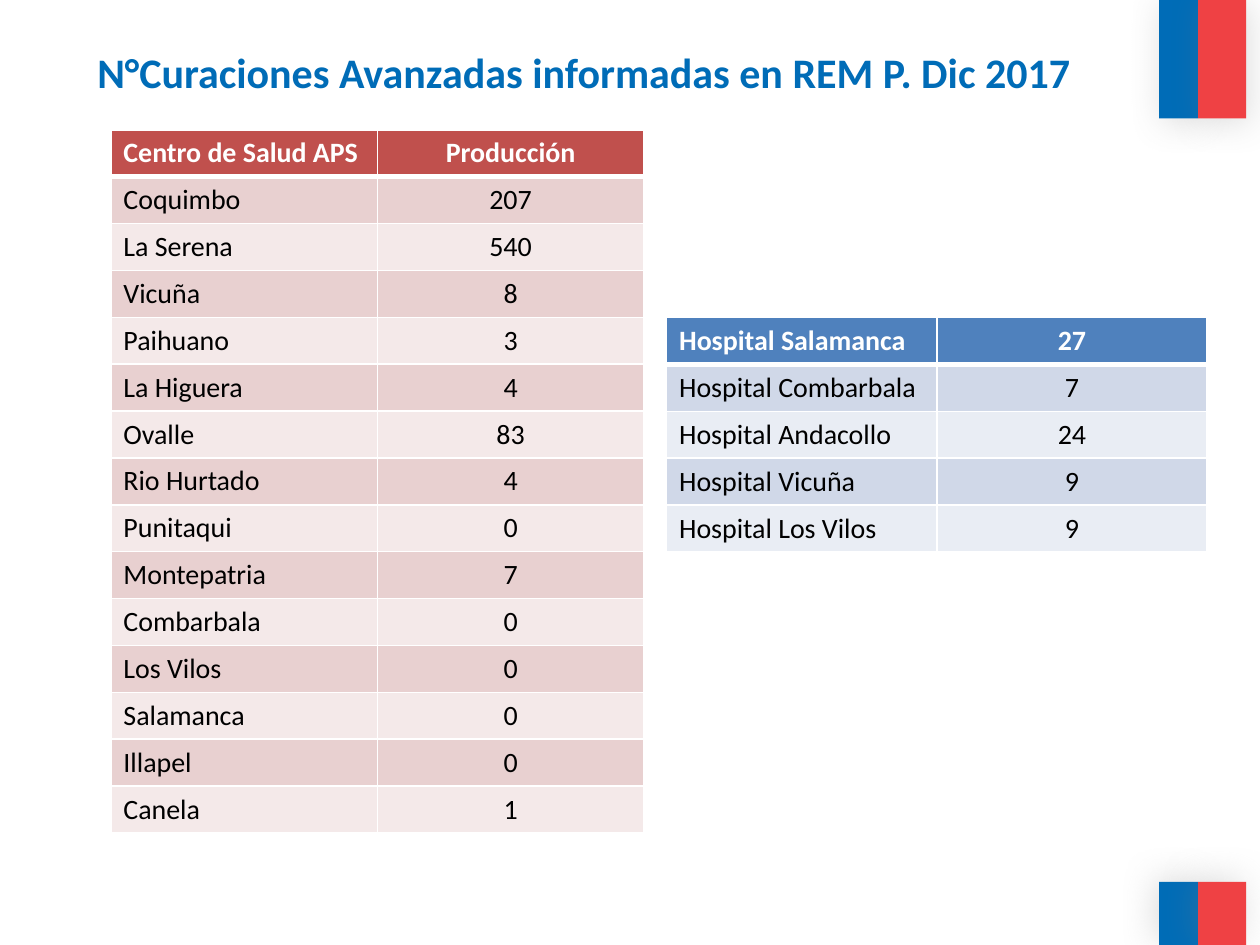
"""Build the slide on advanced wound care counts by health centre."""
from dataclasses import dataclass

from lxml import etree
from pptx import Presentation
from pptx import util as u
from pptx.dml.color import RGBColor
from pptx.enum import shapes, text
from pptx.oxml import parse_xml
from pptx.oxml.ns import nsdecls, qn


@dataclass(frozen=True)
class Theme:
    font: str = "Calibri"
    title_size: int = 24
    cell_size: int = 16
    blue: str = "006CB7"
    red: str = "EF4144"
    white: str = "FFFFFF"
    black: str = "000000"
    shadow: str = "808080"
    centre_fills: tuple = ("C0504D", "E8D0D0", "F4E9E9")
    hospital_fills: tuple = ("4F81BD", "D0D8E8", "E9EDF4")


THEME = Theme()
WIDTH, HEIGHT = 10, 7.5
ROW = 0.37
TITLE = "N°Curaciones Avanzadas informadas en REM P. Dic 2017"
CENTRES = [
    ("Centro de Salud APS", "Producción"),
    ("Coquimbo", "207"),
    ("La Serena", "540"),
    ("Vicuña", "8"),
    ("Paihuano", "3"),
    ("La Higuera", "4"),
    ("Ovalle", "83"),
    ("Rio Hurtado", "4"),
    ("Punitaqui", "0"),
    ("Montepatria", "7"),
    ("Combarbala", "0"),
    ("Los Vilos", "0"),
    ("Salamanca", "0"),
    ("Illapel", "0"),
    ("Canela", "1"),
]
HOSPITALS = [
    ("Hospital Salamanca", "27"),
    ("Hospital Combarbala", "7"),
    ("Hospital Andacollo", "24"),
    ("Hospital Vicuña", "9"),
    ("Hospital Los Vilos", "9"),
]
TABLES = [
    (CENTRES, 0.88, 1.03, 2.115, THEME.centre_fills),
    (HOSPITALS, 5.29, 2.52, 2.145, THEME.hospital_fills),
]
BANDS = [(0, 0.94, 45), (7, HEIGHT - 7, 215)]
STRIPES = [(9.2, 0.31, THEME.blue), (9.51, 0.38, THEME.red)]


def rgb(value):
    return RGBColor.from_string(value)


def add_run(p, words, size, color, bold):
    r = p.add_run()
    r.text = words
    r.font.name, r.font.size, r.font.bold = THEME.font, u.Pt(size), bold
    r.font.color.rgb = rgb(color)


def add_stripe(s, left, top, width, height, color, angle):
    sp = s.shapes.add_shape(shapes.MSO_SHAPE.RECTANGLE,
                            *map(u.Inches, (left, top, width, height)))
    sp.fill.solid()
    sp.fill.fore_color.rgb = rgb(color)
    sp.line.fill.background()
    sp.shadow.inherit = False
    effects = sp._element.spPr.find(qn("a:effectLst"))
    effects.append(parse_xml(
        f'<a:outerShdw {nsdecls("a")} blurRad="{u.Pt(20)}" dist="{u.Pt(3)}" '
        f'dir="{angle * 60000}" algn="ctr" rotWithShape="0">'
        f'<a:srgbClr val="{THEME.shadow}"><a:alpha val="25000"/></a:srgbClr>'
        '</a:outerShdw>'))


def set_borders(cell, bottom):
    tc_pr = cell._tc.get_or_add_tcPr()
    for i, (side, width) in enumerate(zip("LRTB", (1, 1, 1, bottom))):
        ln = etree.Element(qn(f"a:ln{side}"), w=str(u.Pt(width)))
        fill = etree.SubElement(ln, qn("a:solidFill"))
        etree.SubElement(fill, qn("a:srgbClr"), val=THEME.white)
        tc_pr.insert(i, ln)


def add_table(s, rows, left, top, col_width, fills):
    head, *bands = fills
    columns = len(rows[0])
    table = s.shapes.add_table(
        len(rows), columns, u.Inches(left), u.Inches(top),
        u.Inches(columns * col_width), u.Inches(len(rows) * ROW)).table
    for column in table.columns:
        column.width = u.Inches(col_width)
    for i, row in enumerate(rows):
        table.rows[i].height = u.Inches(ROW)
        is_head = i == 0
        for j, words in enumerate(row):
            cell = table.cell(i, j)
            cell.fill.solid()
            cell.fill.fore_color.rgb = rgb(head if is_head else bands[(i - 1) % 2])
            set_borders(cell, 3 if is_head else 1)
            p = cell.text_frame.paragraphs[0]
            p.alignment = text.PP_ALIGN.CENTER if j else text.PP_ALIGN.LEFT
            add_run(p, words, THEME.cell_size,
                    THEME.white if is_head else THEME.black, is_head)


def main():
    prs = Presentation()
    prs.slide_width, prs.slide_height = u.Inches(WIDTH), u.Inches(HEIGHT)
    s = prs.slides.add_slide(prs.slide_layouts[5])
    for top, height, angle in BANDS:
        for left, width, color in STRIPES:
            add_stripe(s, left, top, width, height, color, angle)
    title = s.shapes.title
    title.left, title.top, title.width, title.height = map(
        u.Inches, (0.17, 0.25, 8.93, 0.63))
    tf = title.text_frame
    tf.vertical_anchor = text.MSO_ANCHOR.MIDDLE
    p = tf.paragraphs[0]
    p.alignment = text.PP_ALIGN.CENTER
    add_run(p, TITLE, THEME.title_size, THEME.blue, True)
    for table in TABLES:
        add_table(s, *table)
    prs.save("out.pptx")


if __name__ == "__main__":
    main()
